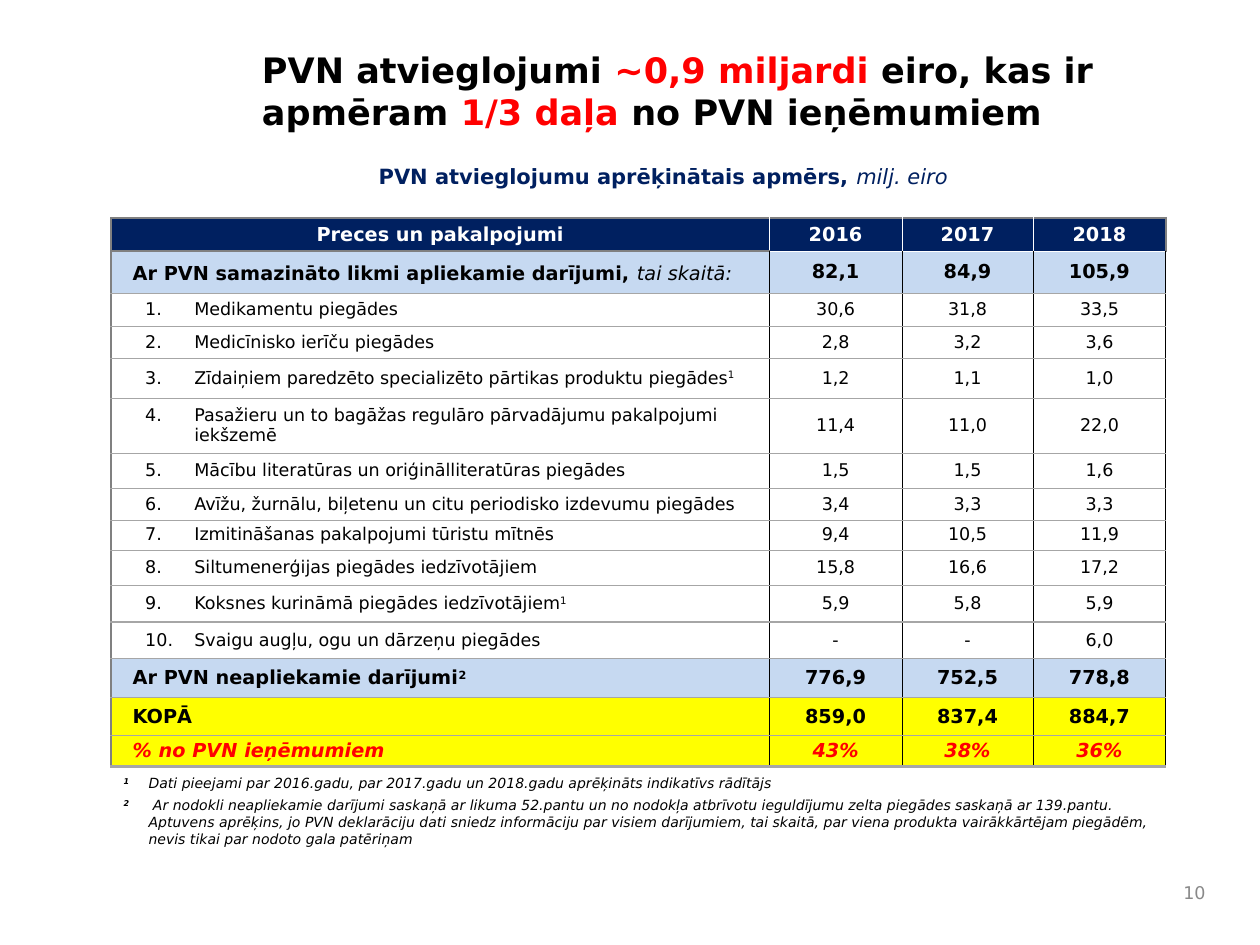
from dataclasses import dataclass

from lxml.etree import SubElement
from pptx import Presentation
from pptx.dml.color import RGBColor
from pptx.enum.text import MSO_ANCHOR, MSO_AUTO_SIZE, PP_ALIGN
from pptx.oxml import parse_xml
from pptx.oxml.ns import nsdecls, qn
from pptx.util import Pt


@dataclass(frozen=True)
class Theme:
    font: str = "DejaVu Sans"
    black: str = "000000"
    white: str = "FFFFFF"
    navy: str = "002060"
    red: str = "FF0000"
    pale_blue: str = "C6D9F1"
    yellow: str = "FFFF00"
    frame: str = "808080"
    rule: str = "A6A6A6"
    number: str = "898989"
    title_size: float = 20
    subtitle_size: float = 12
    heading_size: float = 11
    body_size: float = 10
    note_size: float = 8


THEME = Theme()
ITALIC = {"bold": False, "italic": True}
SUPERSCRIPT = {"superscript": True}
RED = {"color": THEME.red}

HEADER = ("Preces un pakalpojumi", "2016", "2017", "2018")
REDUCED_RATE = ([("Ar PVN samazināto likmi apliekamie darījumi, ", {}), ("tai skaitā:", ITALIC)],
                "82,1", "84,9", "105,9")
ITEMS = [
    ("Medikamentu piegādes", "30,6", "31,8", "33,5"),
    ("Medicīnisko ierīču piegādes", "2,8", "3,2", "3,6"),
    ([("Zīdaiņiem paredzēto specializēto pārtikas produktu piegādes", {}), ("1", SUPERSCRIPT)],
     "1,2", "1,1", "1,0"),
    ("Pasažieru un to bagāžas regulāro pārvadājumu pakalpojumi iekšzemē", "11,4", "11,0", "22,0"),
    ("Mācību literatūras un oriģinālliteratūras piegādes", "1,5", "1,5", "1,6"),
    ("Avīžu, žurnālu, biļetenu un citu periodisko izdevumu piegādes", "3,4", "3,3", "3,3"),
    ("Izmitināšanas pakalpojumi tūristu mītnēs", "9,4", "10,5", "11,9"),
    ("Siltumenerģijas piegādes iedzīvotājiem", "15,8", "16,6", "17,2"),
    ([("Koksnes kurināmā piegādes iedzīvotājiem", {}), ("1", SUPERSCRIPT)], "5,9", "5,8", "5,9"),
    ("Svaigu augļu, ogu un dārzeņu piegādes", "-", "-", "6,0"),
]
EXEMPT = ([("Ar PVN neapliekamie darījumi", {}), ("2", SUPERSCRIPT)], "776,9", "752,5", "778,8")
TOTAL = ("KOPĀ", "859,0", "837,4", "884,7")
SHARE = ("% no PVN ieņēmumiem", "43%", "38%", "36%")

COLUMN_WIDTHS = (376, 75.8, 75, 75.8)
ROW_HEIGHTS = (18.9, 24, 18.9, 18.3, 22.9, 31.4, 20, 18.3, 17.1, 20, 21.1, 21.1, 22.3, 21.7, 17.7)


def write(paragraph, content, *, size, color=THEME.black, bold=False, italic=False,
          align=PP_ALIGN.LEFT, left=0, hanging=0, number=None, tab=None,
          line_spacing=None, space_after=None):
    """Fill a paragraph from a string or from (text, overrides) pairs."""
    paragraph.alignment = align
    properties = paragraph._p.get_or_add_pPr()
    if left:
        properties.set("marL", str(Pt(left)))
        properties.set("indent", str(-Pt(hanging)))
    if number:
        SubElement(properties, qn("a:buFont"), typeface="+mj-lt")
        SubElement(properties, qn("a:buAutoNum"), type="arabicPeriod", startAt=str(number))
    if tab:
        tabs = SubElement(properties, qn("a:tabLst"))
        SubElement(tabs, qn("a:tab"), pos=str(Pt(tab)), algn="l")
    if line_spacing:
        paragraph.line_spacing = line_spacing
    if space_after:
        paragraph.space_after = Pt(space_after)
    pairs = [(content, {})] if isinstance(content, str) else content
    for text, changes in pairs:
        style = {"color": color, "bold": bold, "italic": italic, **changes}
        run = paragraph.add_run()
        run.text = text
        run.font.name = THEME.font
        run.font.size = Pt(size)
        run.font.bold = style["bold"]
        run.font.italic = style["italic"]
        run.font.color.rgb = RGBColor.from_string(style["color"])
        if style.get("superscript"):
            run._r.get_or_add_rPr().set("baseline", "30000")


def add_text_frame(slide, box):
    frame = slide.shapes.add_textbox(*map(Pt, box)).text_frame
    frame.word_wrap = True
    return frame


def add_title(slide, box):
    title = slide.shapes.title
    title.left, title.top, title.width, title.height = map(Pt, box)
    frame = title.text_frame
    frame.auto_size = MSO_AUTO_SIZE.NONE
    frame.vertical_anchor = MSO_ANCHOR.TOP
    write(frame.paragraphs[0],
          [("PVN atvieglojumi ", {}), ("~0,9 miljardi", RED), ("\u00a0eiro, kas ir apmēram", {}),
           (" 1/3 daļa ", RED), ("no PVN ieņēmumiem", {})],
          size=THEME.title_size, bold=True)


def add_subtitle(slide, box):
    write(add_text_frame(slide, box).paragraphs[0],
          [("PVN atvieglojumu aprēķinātais apmērs, ", {}), ("milj. eiro", ITALIC)],
          size=THEME.subtitle_size, color=THEME.navy, bold=True,
          align=PP_ALIGN.CENTER, space_after=6)


def set_borders(cell, **edges):
    """Set the edges L, R, T and B, each given as (color, width)."""
    properties = cell._tc.get_or_add_tcPr()
    for index, side in enumerate("LRTB"):
        color, width = edges[side]
        properties.insert(index, parse_xml(
            f'<a:ln{side} {nsdecls("a")} w="{Pt(width)}"><a:solidFill>'
            f'<a:srgbClr val="{color}"/></a:solidFill></a:ln{side}>'))


def table_rows():
    """Yield cell texts, fill, text format and label format for each row."""
    heading = {"size": THEME.heading_size, "bold": True}
    inset = {"left": 7.2}
    yield HEADER, THEME.navy, {**heading, "color": THEME.white}, {"align": PP_ALIGN.CENTER}
    yield REDUCED_RATE, THEME.pale_blue, heading, {
        **inset, "align": PP_ALIGN.JUSTIFY, "tab": 7.2, "line_spacing": 1.15}
    for number, item in enumerate(ITEMS, start=1):
        yield item, THEME.white, {"size": THEME.body_size}, {
            "left": 42.5, "hanging": 28.1, "tab": 42.5, "number": number}
    yield EXEMPT, THEME.pale_blue, heading, inset
    yield TOTAL, THEME.yellow, heading, inset
    yield SHARE, THEME.yellow, {**heading, **RED, "italic": True}, inset


def add_relief_table(slide, box):
    shape = slide.shapes.add_table(len(ROW_HEIGHTS), len(COLUMN_WIDTHS), *map(Pt, box))
    table = shape.table
    table.first_row = table.horz_banding = False
    for column, width in zip(table.columns, COLUMN_WIDTHS):
        column.width = Pt(width)
    for row, height in zip(table.rows, ROW_HEIGHTS):
        row.height = Pt(height)

    frame, divider = (THEME.frame, 1.5), (THEME.black, 0.5)
    header_line = (THEME.white, 0.5)
    rule_widths = [0.5] * 9 + [1] * 3 + [1.5]
    rules = [frame, header_line] + [(THEME.rule, width) for width in rule_widths] 
    rules.insert(11, (THEME.rule, 1))
    rules[-1:] = [(THEME.rule, 1.5), frame]
    last = len(COLUMN_WIDTHS) - 1
    for r, (texts, fill, text_format, label_format) in enumerate(table_rows()):
        inner = header_line if r == 0 else divider
        for c, text in enumerate(texts):
            cell = table.cell(r, c)
            cell.margin_left = cell.margin_right = Pt(5)
            cell.margin_top = cell.margin_bottom = 0
            cell.vertical_anchor = MSO_ANCHOR.MIDDLE
            cell.fill.solid()
            cell.fill.fore_color.rgb = RGBColor.from_string(fill)
            top, bottom = (frame if c == 0 and edge == 1 else rules[edge] for edge in (r, r + 1))
            set_borders(cell, L=frame if c == 0 else inner,
                        R=frame if r == 0 and c == last else inner, T=top, B=bottom)
            place = label_format if c == 0 else {"align": PP_ALIGN.CENTER}
            write(cell.text_frame.paragraphs[0], text, **text_format, **place)


def add_footnotes(slide, box):
    frame = add_text_frame(slide, box)
    notes = [
        "Dati pieejami par 2016.gadu, par 2017.gadu un 2018.gadu aprēķināts indikatīvs rādītājs",
        " Ar nodokli neapliekamie darījumi saskaņā ar likuma 52.pantu un no nodokļa atbrīvotu "
        "ieguldījumu zelta piegādes saskaņā ar 139.pantu. Aptuvens aprēķins, jo PVN deklarāciju "
        "dati sniedz informāciju par visiem darījumiem, tai skaitā, par viena produkta "
        "vairākkārtējam piegādēm, nevis tikai par nodoto gala patēriņam",
    ]
    for number, note in enumerate(notes, start=1):
        paragraph = frame.paragraphs[0] if number == 1 else frame.add_paragraph()
        write(paragraph, [(f"{number}\t", {"bold": True, **SUPERSCRIPT}), (note, {})],
              size=THEME.note_size, italic=True, left=14.2, hanging=14.2, tab=14.2, space_after=3)


def add_slide_number(slide, box):
    frame = add_text_frame(slide, box)
    frame.vertical_anchor = MSO_ANCHOR.MIDDLE
    write(frame.paragraphs[0], "10", size=THEME.body_size, color=THEME.number,
          align=PP_ALIGN.RIGHT)


def main():
    presentation = Presentation()
    presentation.slide_width, presentation.slide_height = Pt(720), Pt(540)
    slide = presentation.slides.add_slide(presentation.slide_layouts[5])
    add_title(slide, (142.5, 24, 533, 68.4))
    add_slide_number(slide, (663, 498.2, 33, 24))
    add_subtitle(slide, (114.5, 90, 529, 21.8))
    add_relief_table(slide, (63.6, 124.6, sum(COLUMN_WIDTHS), sum(ROW_HEIGHTS)))
    add_footnotes(slide, (63.6, 439.2, 600.5, 49))
    presentation.save("out.pptx")


if __name__ == "__main__":
    main()
